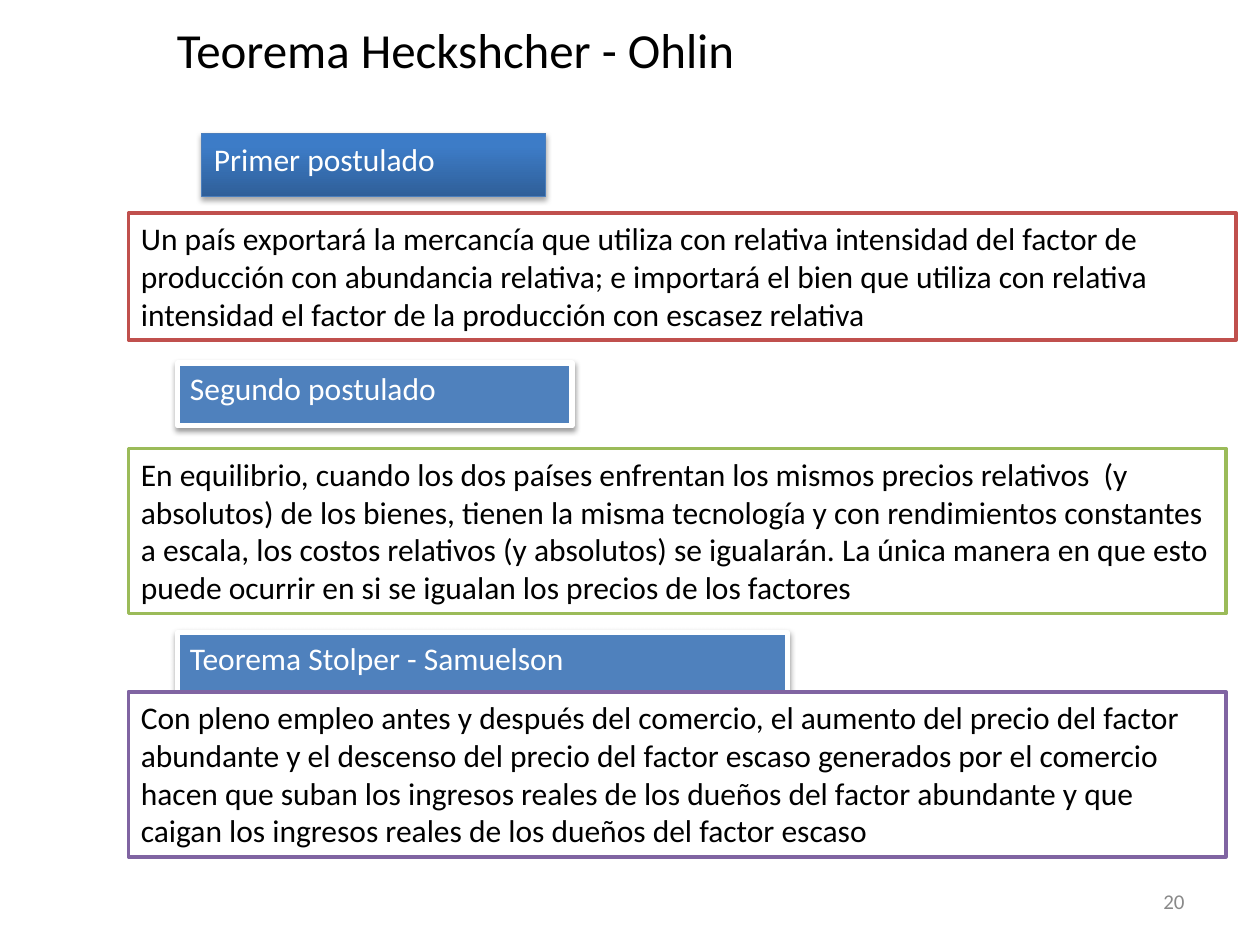
from lxml import etree
from pptx import Presentation
from pptx.dml.color import RGBColor
from pptx.enum import shapes, text
from pptx.oxml import ns
from pptx.util import Pt

TITLE = "Teorema Heckshcher - Ohlin"
PAGE = "20"
BLUE, WHITE, BLACK, GREY = "4F81BD", "FFFFFF", "000000", "898989"
GRADIENT = [(0, "2F5F99"), (80, "3D7CC7"), (100, "3A7CCB")]
LABEL_H, BODY_LEFT = 36, 73.4

# text, left, top, width, line colour, line width, shadow opacity %, shadow distance
LABELS = [
    ("Primer postulado", 115.2, 76.3, 196.6, "4B7EBC", 0.75, 35, 1.8),
    ("Segundo postulado", 101.5, 207.4, 225.4, WHITE, 3, 38, 1.6),
    ("Teorema Stolper - Samuelson", 101.5, 361.4, 348.5, WHITE, 3, 38, 1.6),
]
# text, top, width, height, line colour
BODIES = [
    ("Un país exportará la mercancía que utiliza con relativa intensidad del factor de "
     "producción con abundancia relativa; e importará el bien que utiliza con relativa "
     "intensidad el factor de la producción con escasez relativa",
     121.7, 632.9, 72.7, "C0504D"),
    ("En equilibrio, cuando los dos países enfrentan los mismos precios relativos  (y "
     "absolutos) de los bienes, tienen la misma tecnología y con rendimientos constantes "
     "a escala, los costos relativos (y absolutos) se igualarán. La única manera en que "
     "esto puede ocurrir en si se igualan los precios de los factores",
     256.3, 627.1, 94.3, "9BBB59"),
    ("Con pleno empleo antes y después del comercio, el aumento del precio del factor "
     "abundante y el descenso del precio del factor escaso generados por el comercio "
     "hacen que suban los ingresos reales de los dueños del factor abundante y que "
     "caigan los ingresos reales de los dueños del factor escaso",
     395.3, 627.1, 94.3, "8064A2"),
]


def rgb(color):
    return RGBColor.from_string(color)


def write(sp, content, size, color, align=text.PP_ALIGN.LEFT, anchor=text.MSO_ANCHOR.TOP):
    tf = sp.text_frame
    tf.word_wrap = True
    tf.vertical_anchor = anchor
    p = tf.paragraphs[0]
    p.alignment = align
    r = p.add_run()
    r.text = content
    r.font.name, r.font.size = "Calibri", Pt(size)
    r.font.color.rgb = rgb(color)


def add_text(s, box, *style):
    write(s.shapes.add_textbox(*map(Pt, box)), *style)


def add_box(s, box, fill, line, line_width):
    sp = s.shapes.add_shape(shapes.MSO_SHAPE.RECTANGLE, *map(Pt, box))
    sp.shadow.inherit = False
    sp.fill.solid()
    sp.fill.fore_color.rgb = rgb(fill)
    sp.line.color.rgb = rgb(line)
    sp.line.width = Pt(line_width)
    return sp


def add_color(parent, color):
    return etree.SubElement(parent, ns.qn("a:srgbClr"), val=color)


def set_gradient(sp, stops):
    sp.fill.gradient()
    sp.fill.gradient_angle = 90
    stop_list = next(sp._element.spPr.iter(ns.qn("a:gsLst")))
    for old in list(stop_list):
        stop_list.remove(old)
    for position, color in stops:
        add_color(etree.SubElement(stop_list, ns.qn("a:gs"), pos=str(position * 1000)), color)


def set_shadow(sp, opacity, distance):
    effects = sp._element.spPr.find(ns.qn("a:effectLst"))
    shadow = etree.SubElement(effects, ns.qn("a:outerShdw"), blurRad=str(Pt(3.1)),
                              dist=str(Pt(distance)), dir="5400000", rotWithShape="0")
    etree.SubElement(add_color(shadow, BLACK), ns.qn("a:alpha"), val=str(opacity * 1000))


def main():
    prs = Presentation()
    prs.slide_width, prs.slide_height = Pt(720), Pt(540)
    s = prs.slides.add_slide(prs.slide_layouts[6])

    # Title
    add_text(s, (31.7, 0, 457.2, 56.2), TITLE, 28, BLACK,
             text.PP_ALIGN.CENTER, text.MSO_ANCHOR.MIDDLE)

    # Headings of the postulates, the first with a gradient
    for i, (label, left, top, width, line, line_width, opacity, distance) in enumerate(LABELS):
        sp = add_box(s, (left, top, width, LABEL_H), BLUE, line, line_width)
        if i == 0:
            set_gradient(sp, GRADIENT)
        set_shadow(sp, opacity, distance)
        write(sp, label, 18, WHITE)

    # Statements
    for body, top, width, height, line in BODIES:
        sp = add_box(s, (BODY_LEFT, top, width, height), WHITE, line, 2)
        write(sp, body, 18, BLACK)

    # Page number
    add_text(s, (516.2, 500.4, 167.8, 28.8), PAGE, 12, GREY,
             text.PP_ALIGN.RIGHT, text.MSO_ANCHOR.MIDDLE)
    prs.save("out.pptx")


if __name__ == "__main__":
    main()
